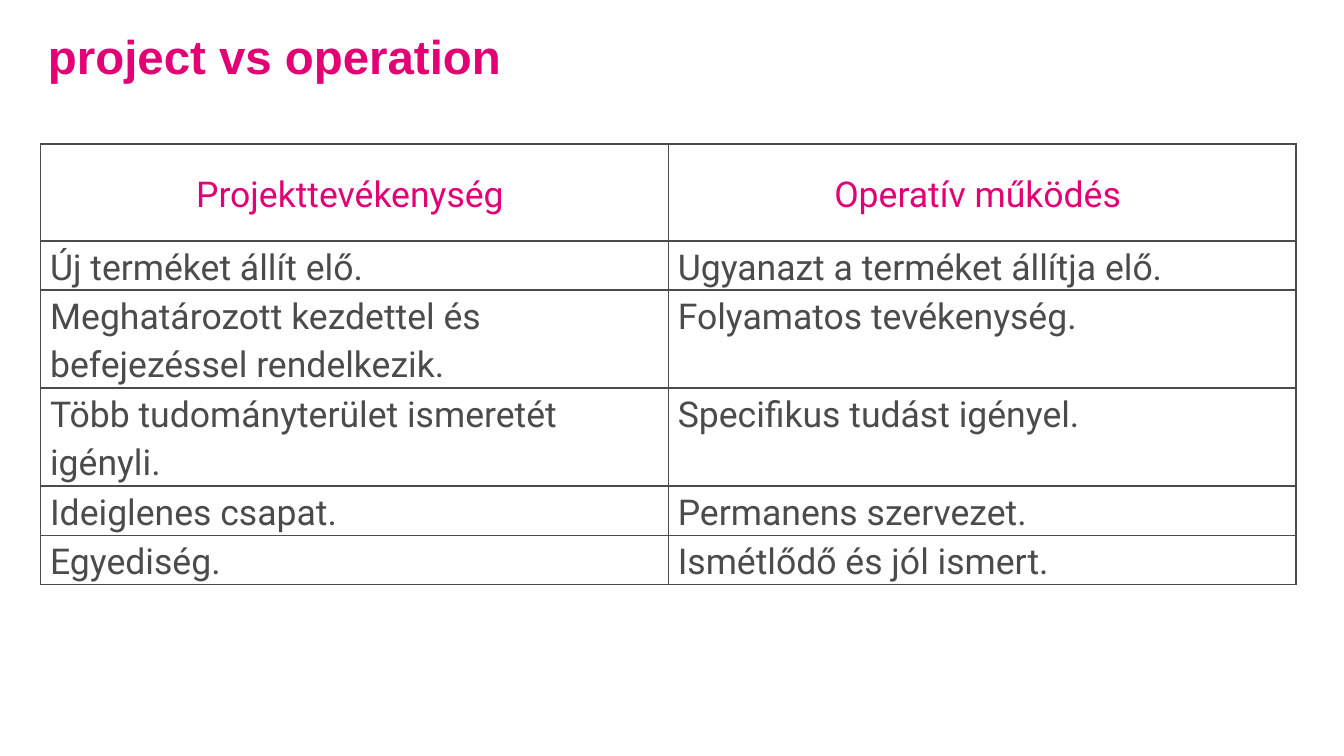
from lxml.etree import SubElement
from pptx import Presentation
from pptx.dml.color import RGBColor
from pptx.enum.text import MSO_ANCHOR, PP_ALIGN
from pptx.oxml.ns import qn
from pptx.util import Inches, Pt

MAGENTA = "E20074"
GREY = "4B4B4B"
WHITE = "FFFFFF"

COMPARISON = [
    ("Projekttevékenység ", "Operatív működés "),
    ("Új terméket állít elő.", "Ugyanazt a terméket állítja elő."),
    ("Meghatározott kezdettel és befejezéssel rendelkezik.", "Folyamatos tevékenység."),
    ("Több tudományterület ismeretét igényli.", "Specifikus tudást igényel."),
    ("Ideiglenes csapat.", "Permanens szervezet."),
    ("Egyediség.", "Ismétlődő és jól ismert."),
]
ROW_HEIGHTS = [0.91, 0.46, 0.92, 0.92, 0.46, 0.46]


def rgb(color):
    return RGBColor.from_string(color)


def write_text(frame, text, *, font, size, color, bold=False,
               align=PP_ALIGN.LEFT, line_spacing=1.0):
    paragraph = frame.paragraphs[0]
    paragraph.alignment = align
    paragraph.line_spacing = line_spacing
    paragraph.space_before = paragraph.space_after = Pt(0)
    run = paragraph.add_run()
    run.text = text
    run.font.name = font
    run.font.size = Pt(size)
    run.font.bold = bold
    run.font.color.rgb = rgb(color)


def add_borders(cell, color, width):
    properties = cell._tc.get_or_add_tcPr()
    for side in ("a:lnL", "a:lnR", "a:lnT", "a:lnB"):
        line = SubElement(properties, qn(side), w=str(Pt(width)))
        fill = SubElement(line, qn("a:solidFill"))
        SubElement(fill, qn("a:srgbClr"), val=color)


def add_title(slide, text):
    title = slide.shapes.title
    title.left, title.top = Inches(0.45), Inches(0.28)
    title.width, title.height = Inches(11.71), Inches(0.55)
    frame = title.text_frame
    frame.margin_left = frame.margin_right = 0
    frame.margin_top = frame.margin_bottom = 0
    frame.vertical_anchor = MSO_ANCHOR.MIDDLE
    write_text(frame, text, font="Arial", size=32, color=MAGENTA,
               bold=True, line_spacing=0.9)


def format_cell(cell, text, is_header):
    cell.margin_left = cell.margin_right = Inches(0.09)
    cell.margin_top = cell.margin_bottom = 0
    cell.vertical_anchor = MSO_ANCHOR.MIDDLE if is_header else MSO_ANCHOR.TOP
    add_borders(cell, GREY, 1)
    cell.fill.solid()
    cell.fill.fore_color.rgb = rgb(WHITE)
    write_text(cell.text_frame, text, font="Roboto", size=24, line_spacing=1.15,
               color=MAGENTA if is_header else GREY,
               align=PP_ALIGN.CENTER if is_header else PP_ALIGN.LEFT)


def add_comparison(slide, rows, heights):
    table = slide.shapes.add_table(
        len(rows), len(rows[0]), Inches(0.38), Inches(1.35),
        Inches(11.77), Inches(sum(heights))).table
    table.horz_banding = False
    for row_index, (texts, height) in enumerate(zip(rows, heights)):
        table.rows[row_index].height = Inches(height)
        for column_index, text in enumerate(texts):
            format_cell(table.cell(row_index, column_index), text, row_index == 0)


def main():
    presentation = Presentation()
    presentation.slide_width = Inches(12.6)
    presentation.slide_height = Inches(7.09)
    title_only = presentation.slide_layouts[5]
    slide = presentation.slides.add_slide(title_only)
    add_title(slide, "project vs operation")
    add_comparison(slide, COMPARISON, ROW_HEIGHTS)
    presentation.save("out.pptx")


if __name__ == "__main__":
    main()
